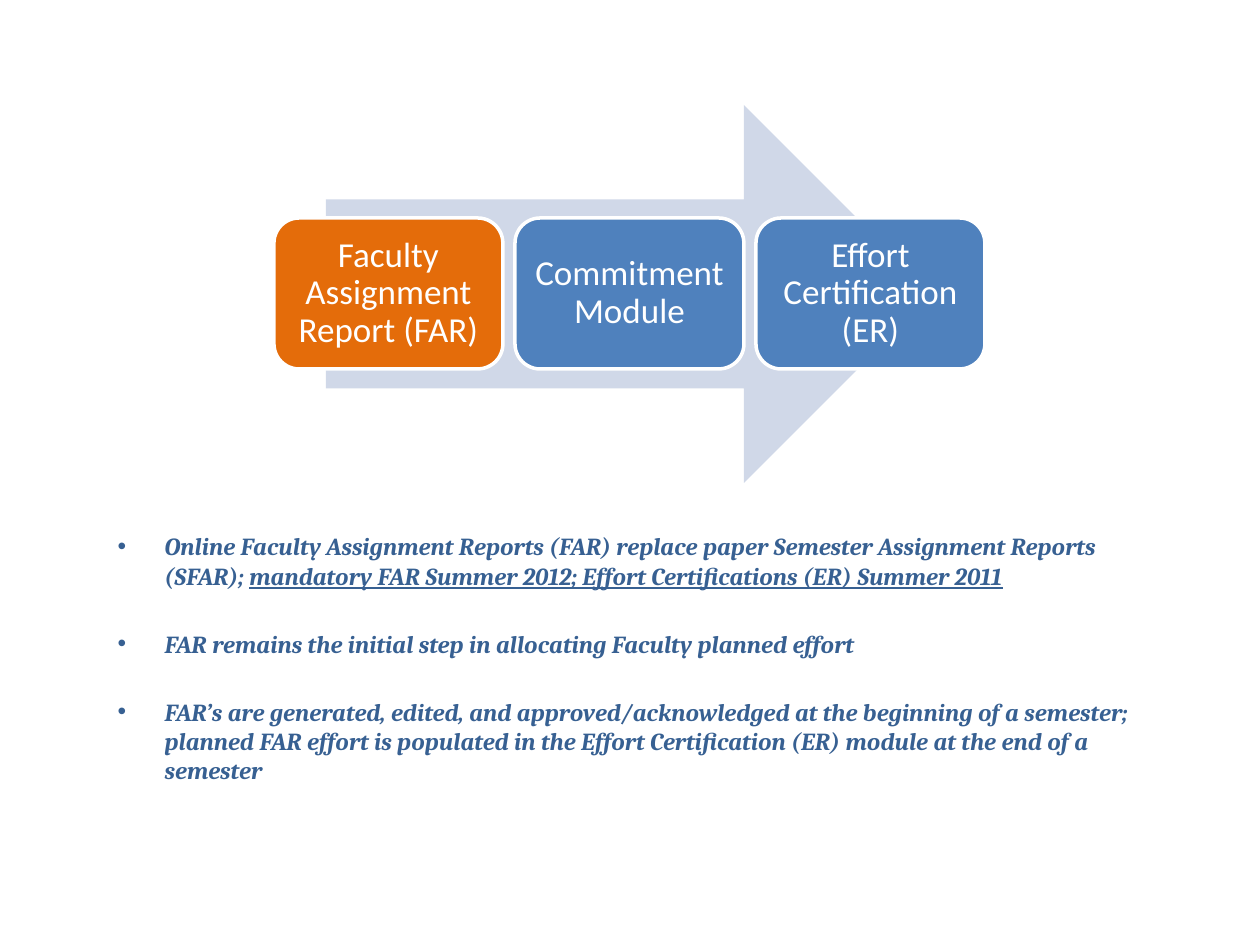
import pptx
import pptx.util
from pptx.dml.color import RGBColor
from pptx.enum.shapes import MSO_SHAPE
from pptx.enum.text import MSO_ANCHOR, MSO_AUTO_SIZE, PP_ALIGN

HEX = {"arrow": "D0D8E8", "now": "E46C0A", "next": "4F81BD",
       "white": "FFFFFF", "text": "376092"}

STEPS = [("Faculty Assignment Report (FAR)", "now"),
         ("Commitment Module", "next"),
         ("Effort Certification (ER)", "next")]

# Each point is a list of (text, underlined) runs
POINTS = [
    [("Online Faculty Assignment Reports (FAR) replace paper Semester "
      "Assignment Reports (SFAR); ", False),
     ("mandatory FAR Summer 2012; Effort Certifications (ER) Summer 2011", True)],
    [("FAR remains the initial step in allocating Faculty planned effort", False)],
    [("FAR’s are generated, edited, and approved/acknowledged at the beginning "
      "of a semester; planned FAR effort is populated in the Effort "
      "Certification (ER) module at the end of a semester", False)],
]

ARROW = (326, 105, 607, 378)
BODY = (105, 525, 1050, 325)
LEFT, TOP, WIDE, HIGH, STEP = 274, 218, 229, 151, 241
INSET, INDENT = 10, 47


def px(n):
    return pptx.util.Emu(n * 914400 // 126)


def color(name):
    return RGBColor.from_string(HEX[name])


def add_shape(slide, kind, box, fill):
    shape = slide.shapes.add_shape(kind, *map(px, box))
    shape.shadow.inherit = False
    shape.fill.solid()
    shape.fill.fore_color.rgb = color(fill)
    shape.line.fill.background()
    return shape


def add_run(para, text, font, size, tone):
    run = para.add_run()
    run.text = text
    run.font.name = font
    run.font.size = pptx.util.Pt(size)
    run.font.color.rgb = color(tone)
    return run


def add_step(slide, i, text, fill):
    box = (LEFT + i * STEP, TOP, WIDE, HIGH)
    shape = add_shape(slide, MSO_SHAPE.ROUNDED_RECTANGLE, box, fill)
    shape.line.color.rgb = color("white")
    shape.line.width = pptx.util.Pt(2)
    frame = shape.text_frame
    frame.word_wrap = True
    frame.vertical_anchor = MSO_ANCHOR.MIDDLE
    frame.margin_left = frame.margin_right = px(INSET)
    frame.margin_top = frame.margin_bottom = px(INSET)
    para = frame.paragraphs[0]
    para.alignment = PP_ALIGN.CENTER
    para.line_spacing = 0.9
    add_run(para, text, "Calibri", 20, "white")


def fill_body(body):
    body.left, body.top, body.width, body.height = map(px, BODY)
    frame = body.text_frame
    frame.auto_size = MSO_AUTO_SIZE.NONE
    for i, runs in enumerate(POINTS):
        para = frame.add_paragraph() if i else frame.paragraphs[0]
        para.space_before = pptx.util.Pt(0)
        para.space_after = pptx.util.Pt(22)
        props = para._p.get_or_add_pPr()
        props.set("marL", str(px(INDENT)))
        props.set("indent", str(-px(INDENT)))
        for text, under in runs:
            font = add_run(para, text, "Cambria", 14, "text").font
            font.bold = font.italic = True
            font.underline = under


def main():
    deck = pptx.Presentation()
    deck.slide_width, deck.slide_height = px(1260), px(945)
    slide = deck.slides.add_slide(deck.slide_layouts[1])
    title = slide.shapes.title.element
    title.getparent().remove(title)
    fill_body(slide.placeholders[1])
    add_shape(slide, MSO_SHAPE.RIGHT_ARROW, ARROW, "arrow")
    for i, (text, fill) in enumerate(STEPS):
        add_step(slide, i, text, fill)
    deck.save("out.pptx")


if __name__ == "__main__":
    main()
